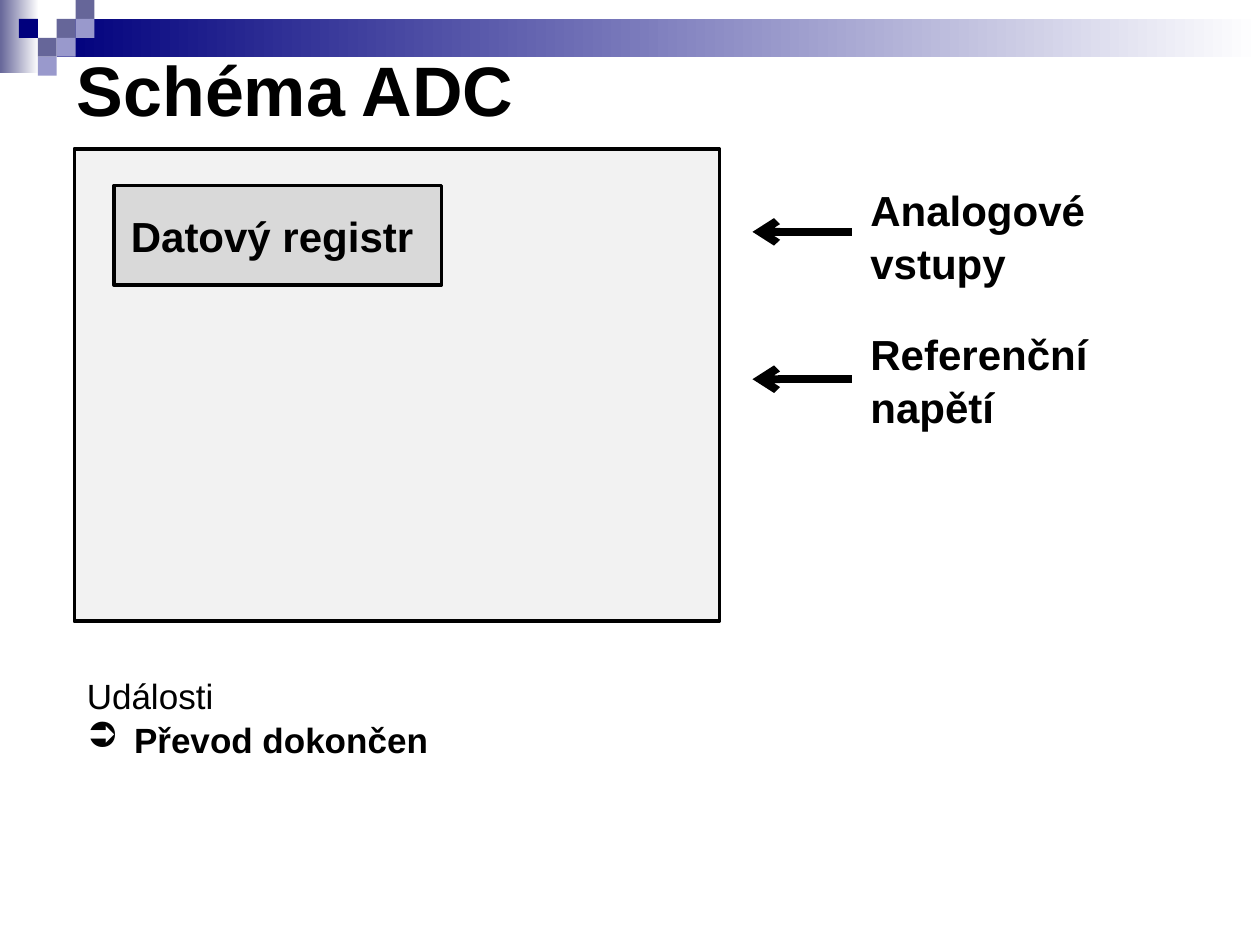
from lxml import etree
from pptx import Presentation
from pptx import util as u
from pptx.dml.color import RGBColor
from pptx.enum import shapes, text
from pptx.oxml import ns

Pt = u.Pt
COLORS = {
    "black": "000000", "white": "FFFFFF", "navy": "00007D",
    "slate": "666699", "lilac": "9999CC", "panel": "F2F2F2", "register": "D9D9D9",
}
SQUARE = 10.8


def color(name):
    return RGBColor.from_string(COLORS[name])


def write(para, words, size=24, bold=True, align=text.PP_ALIGN.LEFT, spacing=1.0):
    para.alignment = align
    para.line_spacing = spacing
    span = para.add_run()
    span.text = words
    span.font.name = "Arial"
    span.font.size = Pt(size)
    span.font.bold = bold
    span.font.color.rgb = color("black")


def add_box(page, left, top, width, height, fill, fade_to=None, outline=None):
    box = page.shapes.add_shape(shapes.MSO_SHAPE.RECTANGLE,
                                Pt(left), Pt(top), Pt(width), Pt(height))
    box.shadow.inherit = False
    if fade_to:
        box.fill.gradient()
        box.fill.gradient_angle = 0
        for stop, name, position in zip(box.fill.gradient_stops, (fill, fade_to), (0, 1)):
            stop.color.rgb = color(name)
            stop.position = position
    else:
        box.fill.solid()
        box.fill.fore_color.rgb = color(fill)
    if outline:
        box.line.color.rgb = color("black")
        box.line.width = Pt(outline)
    else:
        box.line.fill.background()
    return box


def add_text_box(page, left, top, width, height):
    frame = page.shapes.add_textbox(Pt(left), Pt(top), Pt(width), Pt(height)).text_frame
    frame.word_wrap = True
    frame.vertical_anchor = text.MSO_ANCHOR.MIDDLE
    frame.auto_size = text.MSO_AUTO_SIZE.SHAPE_TO_FIT_TEXT
    return frame


def add_bullet(para, symbol, indent):
    props = para._p.get_or_add_pPr()
    props.set("marL", str(Pt(indent)))
    props.set("indent", str(-Pt(indent)))
    etree.SubElement(props, ns.qn("a:buChar"), char=symbol)


def add_arrow(page, tip, tail, y):
    arrow = page.shapes.add_connector(shapes.MSO_CONNECTOR.STRAIGHT,
                                      Pt(tip), Pt(y), Pt(tail), Pt(y))
    arrow.line.color.rgb = color("black")
    arrow.line.width = Pt(4.5)
    etree.SubElement(arrow.line._get_or_add_ln(), ns.qn("a:headEnd"), type="arrow")
    etree.SubElement(arrow._element.spPr, ns.qn("a:effectLst"))


def add_header(page):
    add_box(page, 0, 0, 22.3, 41.8, "slate", fade_to="white")
    add_box(page, 32.4, SQUARE, 687.6, 21.6, "navy", fade_to="white")
    # Squares as (column, row, colour) on a common grid
    for column, row, fill in [(3, 1, "slate"), (4, 0, "slate"), (4, 1, "lilac"),
                              (2, 2, "slate"), (1, 1, "navy"), (3, 2, "lilac"),
                              (2, 3, "lilac")]:
        add_box(page, column * SQUARE, row * SQUARE, SQUARE, SQUARE, fill)


def add_title(page, words):
    title = page.shapes.title
    title.left, title.top, title.width, title.height = Pt(36.7), Pt(22.3), Pt(638), Pt(57)
    title.text_frame.vertical_anchor = text.MSO_ANCHOR.MIDDLE
    write(title.text_frame.paragraphs[0], words, size=40)


def main():
    deck = Presentation()
    deck.slide_width, deck.slide_height = Pt(720), Pt(540)
    page = deck.slides.add_slide(deck.slide_layouts[5])

    add_header(page)
    add_title(page, "Schéma ADC")

    # Converter block with its register
    add_box(page, 42.5, 85, 368.6, 270, "panel", outline=2)
    register = add_box(page, 65.2, 106, 187.2, 57, "register", outline=2)
    register.text_frame.vertical_anchor = text.MSO_ANCHOR.MIDDLE
    write(register.text_frame.paragraphs[0], "Datový registr ", align=text.PP_ALIGN.CENTER)

    # Inputs: label and arrow
    for words, top, arrow_y in [("Analogové vstupy", 101.5, 132.5),
                                ("Referenční napětí", 183.6, 216.7)]:
        label = add_text_box(page, 490.3, top, 187.2, 65.5)
        write(label.paragraphs[0], words, spacing=1.05)
        add_arrow(page, 430, 486.7, arrow_y)

    # Events
    events = add_text_box(page, 42.5, 381.6, 368.6, 55.4)
    write(events.paragraphs[0], "Události", size=20, bold=False, spacing=1.05)
    event = events.add_paragraph()
    write(event, "Převod dokončen", size=20, spacing=1.05)
    add_bullet(event, "➲", 27)

    deck.save("out.pptx")


if __name__ == "__main__":
    main()
